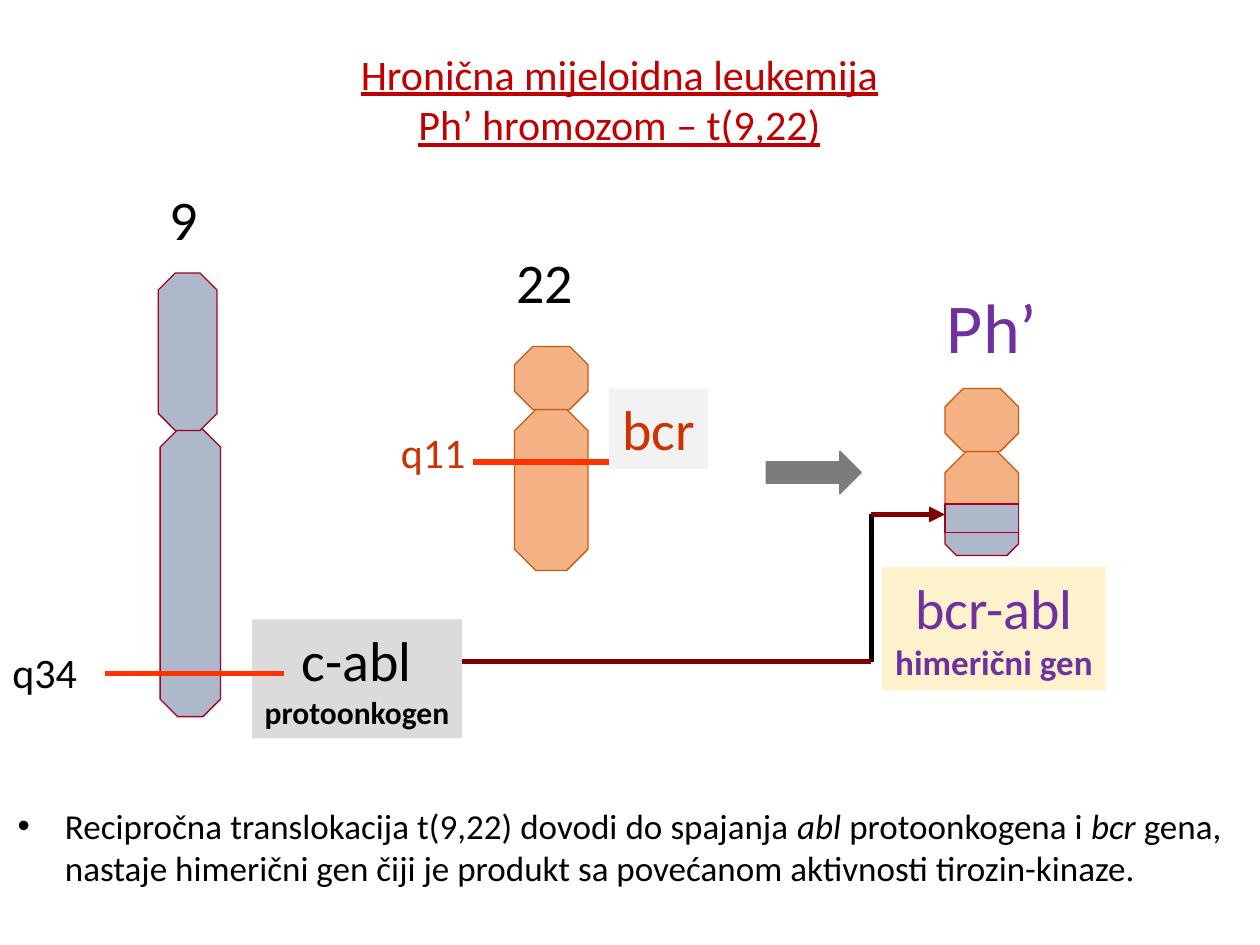
from lxml import etree
from pptx import Presentation
from pptx.dml.color import RGBColor
from pptx.enum import shapes, text
from pptx.oxml import ns
from pptx.util import Pt

BLACK = RGBColor(0x00, 0x00, 0x00)
RED = RGBColor(0xC0, 0x00, 0x00)
BRICK = RGBColor(0xCC, 0x33, 0x00)
FLAME = RGBColor(0xFF, 0x33, 0x00)
MAROON = RGBColor(0x80, 0x00, 0x00)
WINE = RGBColor(0xA5, 0x00, 0x21)
PURPLE = RGBColor(0x70, 0x30, 0xA0)
STEEL = RGBColor(0xAD, 0xB9, 0xCA)
PEACH = RGBColor(0xF4, 0xB1, 0x83)
RUST = RGBColor(0xC5, 0x5A, 0x11)
CREAM = RGBColor(0xFF, 0xF2, 0xCC)
PALE = RGBColor(0xF2, 0xF2, 0xF2)
SILVER = RGBColor(0xDB, 0xDB, 0xDB)
GRAY = RGBColor(0x7C, 0x7C, 0x7C)

KIND = shapes.MSO_SHAPE
ALIGN = text.PP_ALIGN
BLUE_PART = (STEEL, WINE)
PEACH_PART = (PEACH, RUST)


def add_sub(node, tag, **attrs):
    return etree.SubElement(node, ns.qn(tag), attrs)


def add_block(slide, kind, box, fill, edge, width=0.75):
    block = slide.shapes.add_shape(kind, *map(Pt, box))
    block.shadow.inherit = False
    block.fill.solid()
    block.fill.fore_color.rgb = fill
    block.line.color.rgb = edge
    block.line.width = Pt(width)
    return block


def add_arm(slide, box, tint):
    """Draw one octagonal piece of a chromosome."""
    arm = add_block(slide, KIND.OCTAGON, box, *tint)
    arm.adjustments[0] = 0.29


def add_line(slide, start, end, color, arrow=False):
    line = slide.shapes.add_connector(
        shapes.MSO_CONNECTOR.STRAIGHT, *map(Pt, start + end))
    line.line.color.rgb = color
    line.line.width = Pt(3)
    props = line.element.spPr
    if arrow:
        add_sub(props.find(ns.qn("a:ln")), "a:tailEnd", type="triangle")
    add_sub(props, "a:effectLst")


def add_text(slide, box, rows, color, align=ALIGN.LEFT, fill=None, wrap=True):
    """Write rows, each a list of (words, font values), and return the frame."""
    label = slide.shapes.add_textbox(*map(Pt, box))
    if fill is not None:
        label.fill.solid()
        label.fill.fore_color.rgb = fill
    frame = label.text_frame
    frame.word_wrap = wrap
    frame.auto_size = text.MSO_AUTO_SIZE.SHAPE_TO_FIT_TEXT
    for i, row in enumerate(rows):
        para = frame.paragraphs[0] if i == 0 else frame.add_paragraph()
        para.alignment = align
        for words, look in row:
            run = para.add_run()
            run.text = words
            run.font.color.rgb = color
            for key, value in {"name": "Calibri", **look}.items():
                setattr(run.font, key, value)
    return frame


def add_bullet(para, indent):
    props = para._p.get_or_add_pPr()
    props.set("marL", str(Pt(indent)))
    props.set("indent", str(-Pt(indent)))
    add_sub(props, "a:buFont", typeface="Arial")
    add_sub(props, "a:buChar", char="•")


def draw_pair(slide):
    """Draw chromosomes 9 and 22 with their numbers."""
    add_arm(slide, (91.5, 245.5, 34.5, 164), BLUE_PART)
    add_arm(slide, (294, 234, 42, 92), PEACH_PART)
    add_arm(slide, (294, 198, 42, 36), PEACH_PART)
    add_arm(slide, (90.5, 156, 33.5, 90), BLUE_PART)
    big = {"size": Pt(32)}
    add_text(slide, (90, 102, 54, 45.5), [[("9", big)]], BLACK)
    add_text(slide, (288, 138, 54, 45.5), [[("22", big)]], BLACK)


def draw_bcr(slide):
    add_line(slide, (270, 264), (372, 264), FLAME)
    add_text(slide, (222, 240, 51.5, 36), [[("q11", {"size": Pt(24)})]],
             BRICK, wrap=False)
    add_text(slide, (348, 222, 56.5, 46), [[("bcr", {"size": Pt(32)})]],
             BRICK, ALIGN.CENTER, PALE, False)


def draw_fusion(slide):
    """Draw the Ph' chromosome, its gene label and the route from c-abl."""
    add_text(slide, (534, 158.5, 90, 55.5), [[("Ph’", {"size": Pt(40)})]],
             PURPLE)
    add_arm(slide, (540, 258, 42, 42), PEACH_PART)
    add_arm(slide, (540, 222, 42, 36), PEACH_PART)
    add_arm(slide, (540, 294.5, 42, 23), BLUE_PART)
    add_text(slide, (504, 324, 128, 70.5),
             [[("bcr-abl", {"size": Pt(32)})],
              [("himerični gen", {"size": Pt(20), "bold": True})]],
             PURPLE, ALIGN.CENTER, CREAM, False)
    add_block(slide, KIND.RECTANGLE, (540, 288, 42, 16.5), *BLUE_PART)
    low, high = (498, 378), (498, 294)
    add_line(slide, low, high, BLACK)
    add_line(slide, (258, 378), low, MAROON)
    add_line(slide, high, (540, 294), MAROON, arrow=True)


def draw_abl(slide):
    add_text(slide, (0, 366, 84, 36), [[("q34", {"size": Pt(24)})]], BLACK)
    add_text(slide, (144, 354, 120, 68),
             [[("c-abl", {"size": Pt(32)})],
              [("protoonkogen", {"size": Pt(18), "bold": True})]],
             BLACK, ALIGN.CENTER, SILVER)
    add_line(slide, (60, 385), (162, 385), FLAME)


def write_title(slide):
    look = {"size": Pt(24), "underline": True}
    rows = ["Hronična mijeloidna leukemija", "Ph’ hromozom – t(9,22)"]
    add_text(slide, (48, 24, 612, 65.5), [[(row, look)] for row in rows],
             RED, ALIGN.CENTER)


def write_note(slide):
    plain = {"size": Pt(20)}
    slant = {**plain, "italic": True}
    row = [
        ("Recipročna translokacija t(9,22) dovodi do spajanja ", plain),
        ("abl ", slant),
        ("protoonkogena i ", plain),
        ("bcr ", slant),
        ("gena, nastaje himerični gen čiji je produkt sa povećanom "
         "aktivnosti tirozin-kinaze.", plain),
    ]
    frame = add_text(slide, (3, 456, 702, 55.5), [row], BLACK, ALIGN.JUSTIFY)
    add_bullet(frame.paragraphs[0], 27)


def main():
    deck = Presentation()
    deck.slide_width, deck.slide_height = Pt(720), Pt(540)
    slide = deck.slides.add_slide(deck.slide_layouts[6])
    draw_pair(slide)
    draw_bcr(slide)
    draw_fusion(slide)
    write_title(slide)
    draw_abl(slide)
    add_block(slide, KIND.RIGHT_ARROW, (438, 258, 54, 24), GRAY, GRAY, 1)
    write_note(slide)
    deck.save("out.pptx")


if __name__ == "__main__":
    main()
